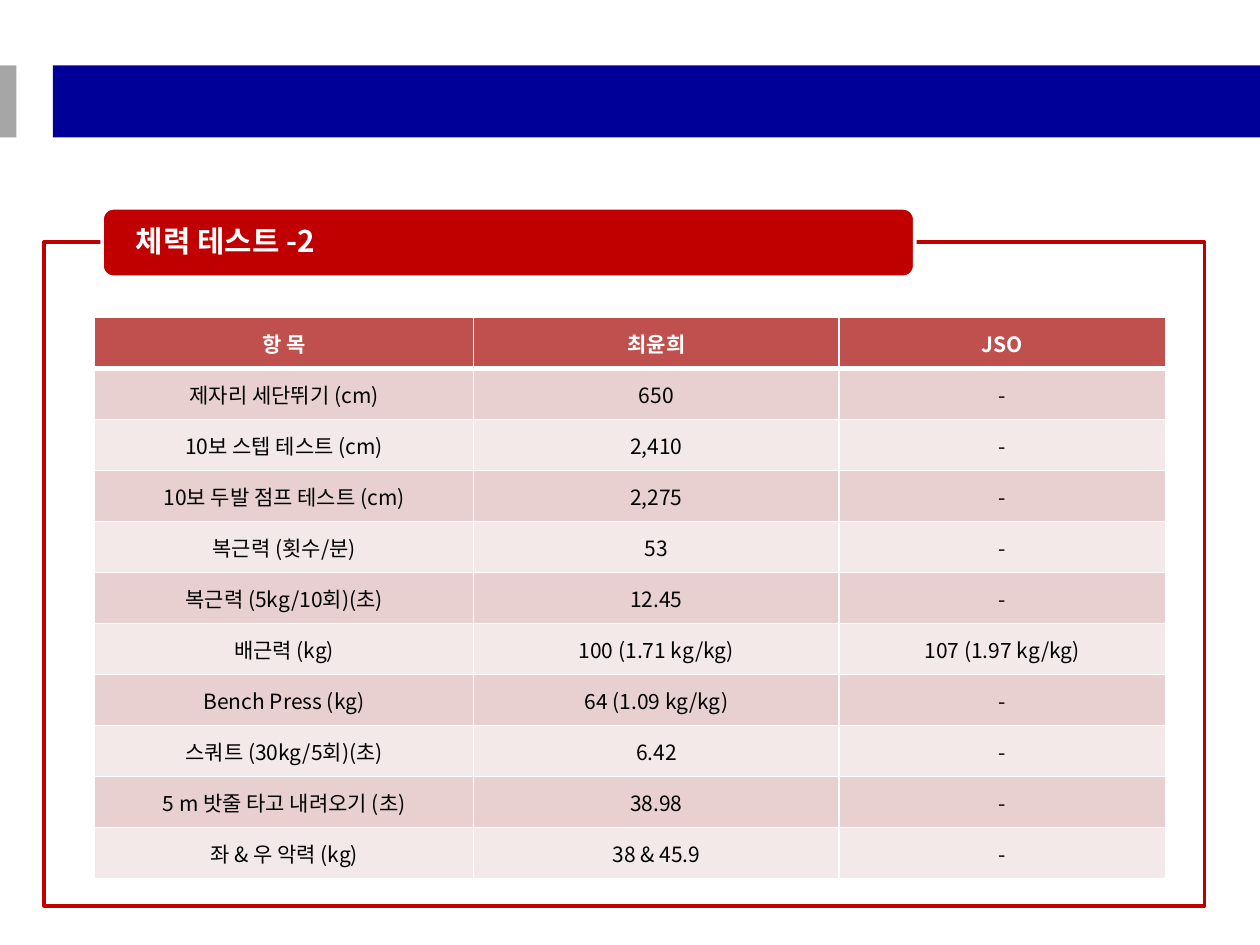
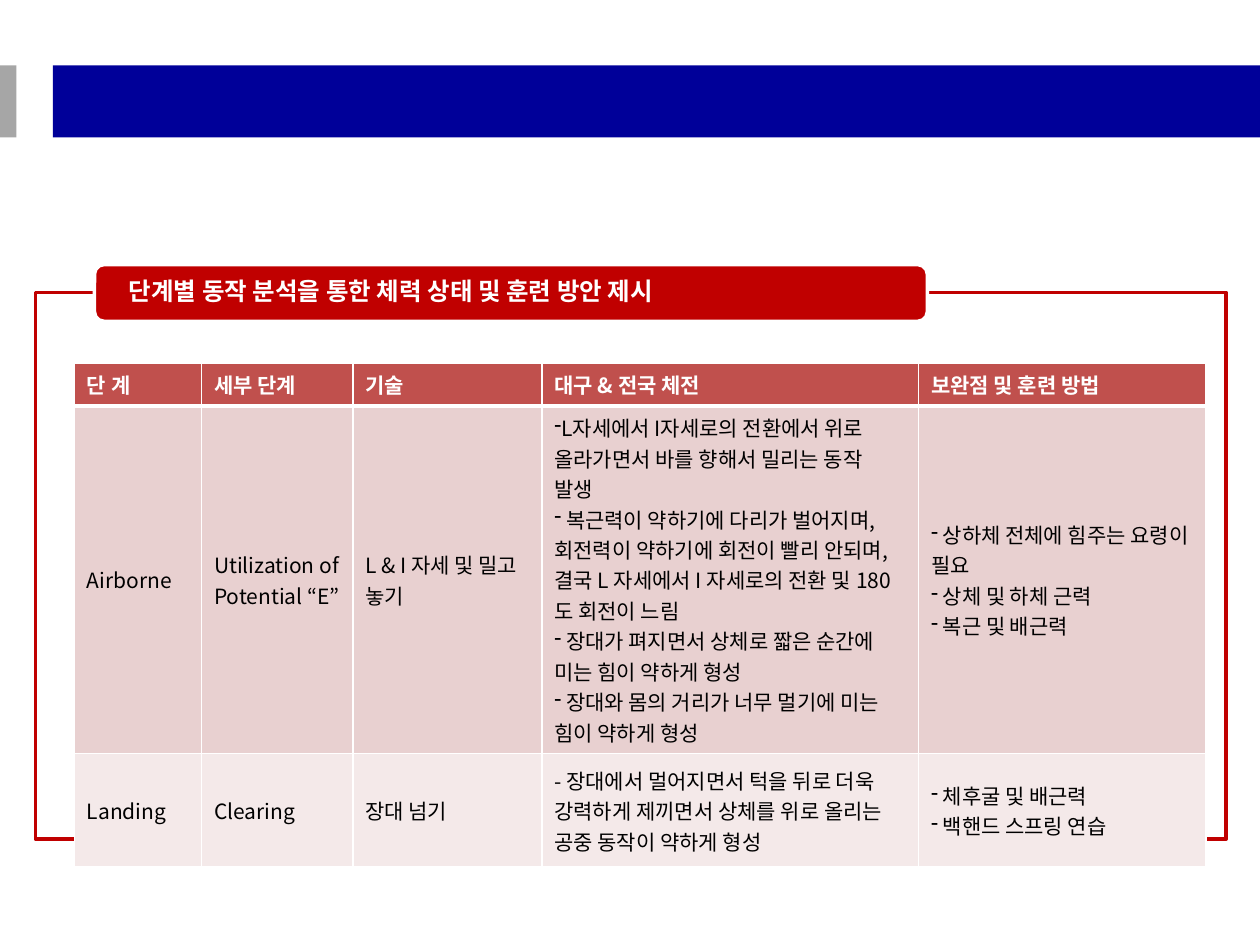
from dataclasses import dataclass

from lxml.etree import SubElement
from pptx import Presentation
from pptx.dml.color import RGBColor
from pptx.enum.shapes import MSO_SHAPE
from pptx.enum.text import MSO_ANCHOR, PP_ALIGN
from pptx.oxml.ns import qn
from pptx.util import Inches, Pt

WHITE = RGBColor(0xFF, 0xFF, 0xFF)
BLACK = RGBColor(0x00, 0x00, 0x00)
NAVY = RGBColor(0x00, 0x00, 0x99)
GREY = RGBColor(0xA6, 0xA6, 0xA6)
RED = RGBColor(0xC0, 0x00, 0x00)
HEADER_RED = RGBColor(0xC0, 0x50, 0x4D)
ROW_FILLS = (RGBColor(0xE8, 0xD0, 0xD0), RGBColor(0xF4, 0xE9, 0xE9))
FONT = "Noto Sans CJK KR"
TABLE_SIZE = 12

# The slide is a grid of 100 columns by 75 rows of square units.
SLIDE_WIDTH, SLIDE_HEIGHT = Inches(10), Inches(7.5)
UNIT = SLIDE_WIDTH // 100


@dataclass(frozen=True)
class Area:
    """A rectangle in grid units."""
    left: float
    top: float
    width: float
    height: float

    def lengths(self) -> tuple[int, ...]:
        return tuple(round(value * UNIT)
                     for value in (self.left, self.top, self.width, self.height))


# A cell holds plain text, or a tuple of dash-bulleted lines.
Cell = str | tuple[str, ...]


@dataclass(frozen=True)
class TablePage:
    title: str
    title_size: int
    title_inset: float
    frame: Area
    label: Area
    table_left: float
    table_top: float
    columns: tuple[float, ...]
    rows: tuple[float, ...]
    align: PP_ALIGN
    cells: tuple[tuple[Cell, ...], ...]


BAND = Area(4.2, 5.2, 95.8, 5.7)
BAND_STUB = Area(0, 5.2, 1.3, 5.7)

FITNESS_CELLS = (
    ("항 목", "최윤희", "JSO"),
    ("제자리 세단뛰기 (cm)", "650", "-"),
    ("10보 스텝 테스트 (cm)", "2,410", "-"),
    ("10보 두발 점프 테스트 (cm)", "2,275", "-"),
    ("복근력 (횟수/분)", "53", "-"),
    ("복근력 (5kg/10회)(초)", "12.45", "-"),
    ("배근력 (kg)", "100 (1.71 kg/kg)", "107 (1.97 kg/kg)"),
    ("Bench Press (kg)", "64 (1.09 kg/kg)", "-"),
    ("스쿼트 (30kg/5회)(초)", "6.42", "-"),
    ("5 m 밧줄 타고 내려오기 (초)", "38.98", "-"),
    ("좌 & 우 악력 (kg)", "38 & 45.9", "-"),
)

TRAINING_CELLS = (
    ("단 계", "세부 단계", "기술", "대구 & 전국 체전", "보완점 및 훈련 방법"),
    ("Airborne", "Utilization of Potential “E”", "L & I 자세 및 밀고 놓기",
     ("L자세에서 I자세로의 전환에서 위로 올라가면서 바를 향해서 밀리는 동작 발생",
      " 복근력이 약하기에 다리가 벌어지며, 회전력이 약하기에 회전이 빨리 안되며, "
      "결국 L 자세에서 I 자세로의 전환 및 180도 회전이 느림",
      " 장대가 펴지면서 상체로 짧은 순간에 미는 힘이 약하게 형성",
      " 장대와 몸의 거리가 너무 멀기에 미는 힘이 약하게 형성"),
     (" 상하체 전체에 힘주는 요령이 필요", " 상체 및 하체 근력", " 복근 및 배근력")),
    ("Landing", "Clearing", "장대 넘기",
     "- 장대에서 멀어지면서 턱을 뒤로 더욱 강력하게 제끼면서 상체를 위로 올리는 "
     "공중 동작이 약하게 형성",
     (" 체후굴 및 배근력", " 백핸드 스프링 연습")),
)

PAGES = (
    TablePage("체력 테스트 -2", 17, 2.4,
              Area(3.5, 19.2, 92.1, 52.7), Area(8.1, 16.5, 64.5, 5.5),
              7.5, 25.2, (30.1, 29, 25.9), (4.05,) * len(FITNESS_CELLS),
              PP_ALIGN.CENTER, FITNESS_CELLS),
    TablePage("단계별 동작 분석을 통한 체력 상태 및 훈련 방안 제시", 14, 2.5,
              Area(2.8, 23.2, 94.5, 43.4), Area(7.5, 21, 66.1, 4.5),
              5.9, 28.8, (10.1, 12, 15, 29.9, 22.8), (3.4, 27.6, 9),
              PP_ALIGN.LEFT, TRAINING_CELLS),
)


def add_block(page, area: Area, fill: RGBColor, line: RGBColor | None = None,
              kind: MSO_SHAPE = MSO_SHAPE.RECTANGLE):
    block = page.shapes.add_shape(kind, *area.lengths())
    block.shadow.inherit = False
    block.fill.solid()
    block.fill.fore_color.rgb = fill
    if line is None:
        block.line.fill.background()
    else:
        block.line.color.rgb = line
        block.line.width = Pt(2)
    return block


def style_paragraph(para, size: float, color: RGBColor, bold: bool,
                    align: PP_ALIGN = PP_ALIGN.LEFT) -> None:
    para.alignment = align
    font = para.font
    font.name, font.size, font.bold = FONT, Pt(size), bold
    font.color.rgb = color
    defaults = para._p.get_or_add_pPr().find(qn("a:defRPr"))
    SubElement(defaults, qn("a:ea"), typeface=FONT)


def add_dash(para) -> None:
    properties = para._p.get_or_add_pPr()
    properties.set("marL", "0")
    properties.set("indent", "0")
    SubElement(properties, qn("a:buFontTx"))
    SubElement(properties, qn("a:buChar"), char="-")


def add_borders(cell, is_header: bool) -> None:
    properties = cell._tc.get_or_add_tcPr()
    for side in "LRTB":
        width = Pt(3 if is_header and side == "B" else 1)
        line = SubElement(properties, qn(f"a:ln{side}"), w=str(width))
        fill = SubElement(line, qn("a:solidFill"))
        SubElement(fill, qn("a:srgbClr"), val=str(WHITE))


def fill_cell(cell, content: Cell, row: int, align: PP_ALIGN) -> None:
    is_header = row == 0
    add_borders(cell, is_header)
    cell.fill.solid()
    cell.fill.fore_color.rgb = HEADER_RED if is_header else ROW_FILLS[(row - 1) % 2]
    cell.vertical_anchor = MSO_ANCHOR.MIDDLE
    bulleted = isinstance(content, tuple)
    lines = content if bulleted else (content,)
    for index, text in enumerate(lines):
        box = cell.text_frame
        para = box.paragraphs[0] if index == 0 else box.add_paragraph()
        para.text = text
        if bulleted:
            add_dash(para)
        style_paragraph(para, TABLE_SIZE, WHITE if is_header else BLACK, is_header, align)


def add_titled_frame(page, plan: TablePage) -> None:
    frame = add_block(page, plan.frame, WHITE, RED)
    color = frame._element.spPr.find(qn("a:solidFill"))[0]
    SubElement(color, qn("a:alpha"), val="90000")

    label = add_block(page, plan.label, RED, WHITE, MSO_SHAPE.ROUNDED_RECTANGLE)
    box = label.text_frame
    box.word_wrap = True
    box.vertical_anchor = MSO_ANCHOR.MIDDLE
    box.margin_left = box.margin_right = round(plan.title_inset * UNIT)
    box.margin_top = box.margin_bottom = 0
    para = box.paragraphs[0]
    para.text = plan.title
    para.line_spacing = 0.9
    style_paragraph(para, plan.title_size, WHITE, True)


def add_grid_table(page, plan: TablePage) -> None:
    area = Area(plan.table_left, plan.table_top, sum(plan.columns), sum(plan.rows))
    table = page.shapes.add_table(len(plan.rows), len(plan.columns), *area.lengths()).table
    for column, width in zip(table.columns, plan.columns):
        column.width = round(width * UNIT)
    for row, height in zip(table.rows, plan.rows):
        row.height = round(height * UNIT)
    for row_index, contents in enumerate(plan.cells):
        for column_index, content in enumerate(contents):
            fill_cell(table.cell(row_index, column_index), content, row_index, plan.align)


def main() -> None:
    deck = Presentation()
    deck.slide_width, deck.slide_height = SLIDE_WIDTH, SLIDE_HEIGHT
    for plan in PAGES:
        page = deck.slides.add_slide(deck.slide_layouts[6])
        add_block(page, BAND, NAVY)
        add_block(page, BAND_STUB, GREY)
        add_titled_frame(page, plan)
        add_grid_table(page, plan)
    deck.save("out.pptx")


if __name__ == "__main__":
    main()
